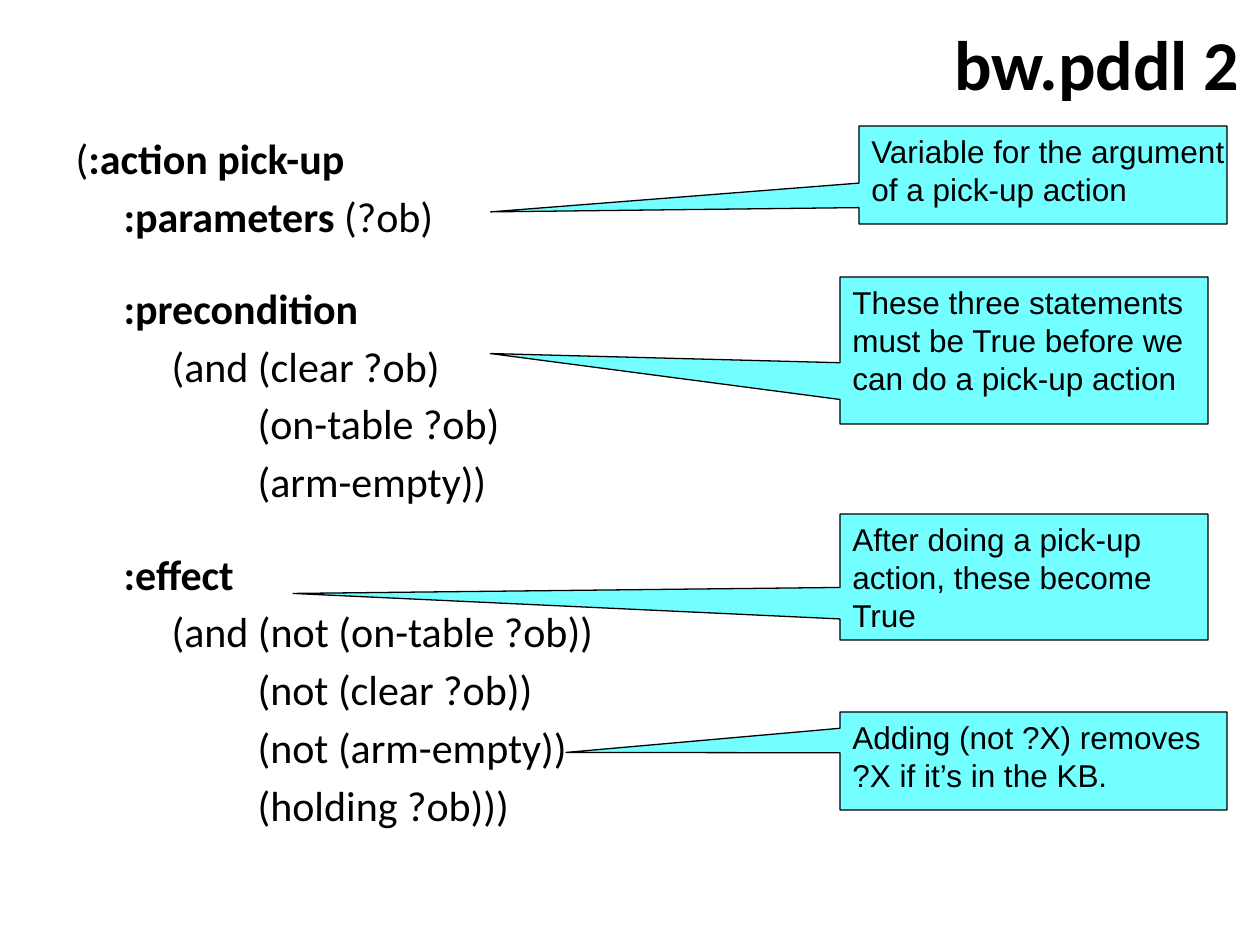
"""Build the slide that explains the pick-up action in PDDL."""
from pptx import Presentation
from pptx.dml.color import RGBColor as Rgb
from pptx.enum.shapes import MSO_SHAPE as Kind
from pptx.enum.text import MSO_ANCHOR as Anchor, MSO_AUTO_SIZE as Auto, PP_ALIGN as Align
from pptx.util import Emu, Pt

COLORS = {"ink": "000000", "note": "73FEFF"}
SCALE = 914400 / 126
STEPS = [0, 48, 96, 182]

CODE = [
    (0, "(*:action pick-up*"),
    (1, "*:parameters* (?ob)"),
    (1, "*:precondition*"),
    (2, "(and (clear ?ob)"),
    (3, "(on-table ?ob)"),
    (3, "(arm-empty))"),
    (1, "*:effect*"),
    (2, "(and (not (on-table ?ob))"),
    (3, "(not (clear ?ob))"),
    (3, "(not (arm-empty))"),
    (3, "(holding ?ob)))"),
]
HEADS = ("*:precondition*", "*:effect*")

NOTES = [
    ((859, 126, 368, 98), (-1.501, 0.377),
     ["Variable for the argument", "of a pick-up action"]),
    ((840, 277, 368, 147), (-1.45, 0.021),
     ["These three statements", "must be True before we", "can do a pick-up action"]),
    ((840, 514, 368, 126), (-1.986, 0.131),
     ["After doing a pick-up", "action, these become", "True"]),
    ((840, 712, 387, 98), (-1.208, -0.087),
     ["Adding (not ?X) removes", "?X if it’s in the KB."]),
]


def px(n):
    """Turn px into EMU."""
    return Emu(round(n * SCALE))


def paint(hue):
    """Return the named colour."""
    return Rgb.from_string(COLORS[hue])


def place(shape, box):
    """Move a shape to a box in px."""
    shape.left, shape.top, shape.width, shape.height = map(px, box)


def write(para, text, size, font="Calibri", align=Align.LEFT, before=0, indent=0):
    """Fill a paragraph, with text between asterisks in bold."""
    para.alignment = align
    para.space_before = Pt(before)
    props = para._p.get_or_add_pPr()
    props.set("marL", str(px(indent)))
    props.set("indent", "0")
    if props.find("{*}buNone") is None:
        props.append(props.makeelement(
            "{http://schemas.openxmlformats.org/drawingml/2006/main}buNone", {}))
    for i, part in enumerate(text.split("*")):
        if part:
            run = para.add_run()
            run.text = part
            run.font.name, run.font.size = font, Pt(size)
            run.font.bold = i % 2 == 1
            run.font.color.rgb = paint("ink")


def lines(frame, count):
    """Yield the paragraphs of a frame, adding those it lacks."""
    for i in range(count):
        yield frame.add_paragraph() if i else frame.paragraphs[0]


def title(shape, box):
    """Set the slide title."""
    place(shape, box)
    frame = shape.text_frame
    frame.auto_size = Auto.NONE
    frame.vertical_anchor = Anchor.MIDDLE
    write(frame.paragraphs[0], "*bw.pddl 2*", 40, align=Align.CENTER)


def code(shape, box):
    """Set the listing, indented by level."""
    place(shape, box)
    frame = shape.text_frame
    frame.auto_size = Auto.NONE
    for para, (level, text) in zip(lines(frame, len(CODE)), CODE):
        write(para, text, 24, before=24 if text in HEADS else 4.2,
              indent=STEPS[level])


def note(slide, box, tip, rows):
    """Add a callout whose tip points at the listing."""
    shape = slide.shapes.add_shape(Kind.RECTANGULAR_CALLOUT, *map(px, box))
    shape.shadow.inherit = False
    shape.adjustments[0], shape.adjustments[1] = tip
    shape.fill.solid()
    shape.fill.fore_color.rgb = paint("note")
    shape.line.color.rgb = paint("ink")
    shape.line.width = Pt(0.75)
    frame = shape.text_frame
    frame.word_wrap = False
    frame.vertical_anchor = Anchor.TOP
    for para, row in zip(lines(frame, len(rows)), rows):
        write(para, row, 18, font="Arial")


def main():
    """Build and save the slide."""
    deck = Presentation()
    deck.slide_width, deck.slide_height = px(1260), px(945)
    slide = deck.slides.add_slide(deck.slide_layouts[1])
    title(slide.shapes.title, (924, 0, 346, 126))
    code(slide.placeholders[1], (63, 126, 1071, 777))
    for box, tip, rows in NOTES:
        note(slide, box, tip, rows)
    deck.save("out.pptx")


if __name__ == "__main__":
    main()
